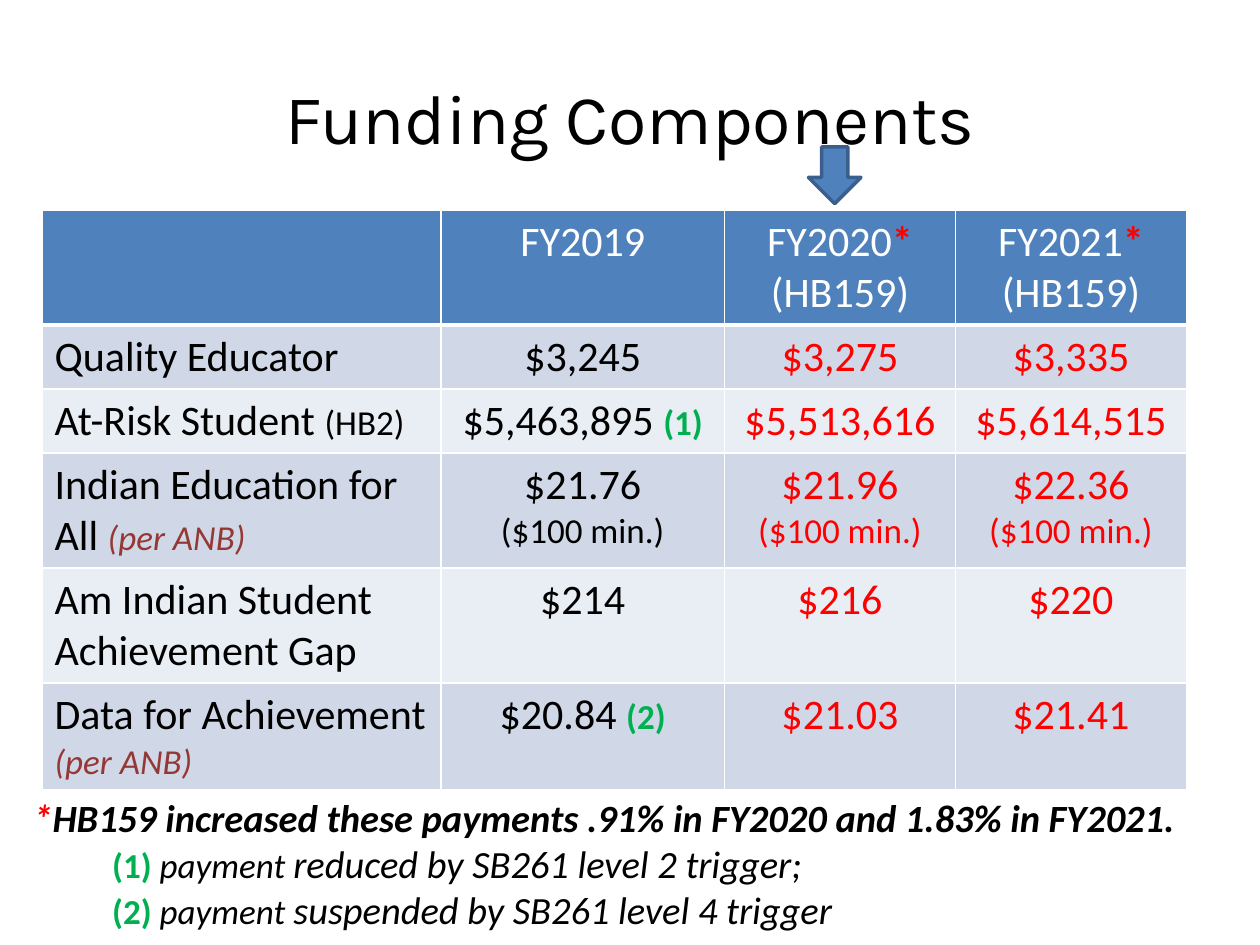
from typing import NamedTuple

from lxml.etree import SubElement
from pptx import Presentation
from pptx.dml.color import RGBColor
from pptx.enum.shapes import MSO_SHAPE
from pptx.enum.text import MSO_ANCHOR, MSO_AUTO_SIZE, PP_ALIGN
from pptx.oxml.ns import qn
from pptx.util import Pt

BLUE, BAND, PALE = "4F81BD", "D0D8E8", "E9EDF4"
WHITE, BLACK, RED, GREEN, BROWN = "FFFFFF", "000000", "FF0000", "00B050", "953735"


class Run(NamedTuple):
    text: str
    size: float = 24
    color: str = BLACK
    bold: bool = False
    italic: bool = False
    font: str = "Calibri"


class Row(NamedTuple):
    label: list
    base: list  # paragraphs for FY2019
    later: list  # run lists for FY2020 and FY2021


def paint(target, color: str) -> None:
    """Give a fill a solid colour."""
    target.solid()
    target.fore_color.rgb = RGBColor.from_string(color)


def write(frame, paras: list, align=PP_ALIGN.LEFT, indents=()) -> None:
    """Fill a text frame with paragraphs, each a list of runs."""
    for i, runs in enumerate(paras):
        para = frame.paragraphs[0] if i == 0 else frame.add_paragraph()
        para.alignment = align
        if i < len(indents) and indents[i]:
            para._p.get_or_add_pPr().set("marL", str(Pt(indents[i])))
        for item in runs:
            run = para.add_run()
            run.text = item.text
            font = run.font
            font.name, font.size = item.font, Pt(item.size)
            font.bold, font.italic = item.bold, item.italic
            paint(font.fill, item.color)


def edge(cell, top: float, bottom: float) -> None:
    """Draw white borders; the side borders are 1 pt."""
    props = cell._tc.get_or_add_tcPr()
    for tag, width in (("lnL", 1), ("lnR", 1), ("lnT", top), ("lnB", bottom)):
        line = SubElement(props, qn(f"a:{tag}"), w=str(Pt(width)))
        fill = SubElement(line, qn("a:solidFill"))
        SubElement(fill, qn("a:srgbClr"), val=WHITE)


def year(name: str) -> list:
    return [Run(name, color=WHITE), Run("*", color=RED, bold=True),
            Run(" (HB159)", color=WHITE)]


def raised(*sums: str, note: str = "") -> list:
    """Red amounts, one run list a year, with an optional small note."""
    tail = [Run(f" {note}", 20, RED)] if note else []
    return [[Run(text, color=RED), *tail] for text in sums]


def mark(text: str) -> Run:
    return Run(text, 20, GREEN, bold=True)


PER_ANB = Run("(per ANB)", 20, BROWN, italic=True)
MIN = "($100 min.)"
ROWS = [
    Row([], [[Run("FY2019", color=WHITE)]], [year("FY2020"), year("FY2021")]),
    Row([Run("Quality Educator")], [[Run("$3,245")]],
        raised("$3,275", "$3,335")),
    Row([Run("At-Risk Student "), Run("(HB2)", 20)],
        [[Run("$5,463,895 "), mark("(1)")]],
        raised("$5,513,616", "$5,614,515")),
    Row([Run("Indian Education for All "), PER_ANB],
        [[Run("$21.76")], [Run(MIN, 20)]],
        raised("$21.96", "$22.36", note=MIN)),
    Row([Run("Am Indian Student Achievement Gap")], [[Run("$214")]],
        raised("$216", "$220")),
    Row([Run("Data for Achievement "), PER_ANB],
        [[Run("$20.84 "), mark("(2)")]],
        raised("$21.03", "$21.41")),
]
WIDTHS = [228, 162, 132, 132]


def add_grid(slide) -> None:
    frame = slide.shapes.add_table(
        len(ROWS), len(WIDTHS), Pt(24), Pt(120), Pt(sum(WIDTHS)), Pt(326))
    table = frame.table
    for col, width in zip(table.columns, WIDTHS):
        col.width = Pt(width)
    for r, row in enumerate(ROWS):
        table.rows[r].height = Pt(29.5)  # rows grow with their text
        fill = BLUE if r == 0 else BAND if r % 2 else PALE
        paras = [[row.label], row.base, *([runs] for runs in row.later)]
        for c, text in enumerate(paras):
            cell = table.cell(r, c)
            edge(cell, 3 if r == 1 else 1, 3 if r == 0 else 1)
            paint(cell.fill, fill)
            write(cell.text_frame, text,
                  align=PP_ALIGN.CENTER if c else PP_ALIGN.LEFT)
    frame.height = Pt(326)


def add_arrow(slide) -> None:
    arrow = slide.shapes.add_shape(
        MSO_SHAPE.DOWN_ARROW, Pt(462), Pt(84), Pt(30), Pt(32.4))
    arrow.shadow.inherit = False
    paint(arrow.fill, BLUE)
    paint(arrow.line.fill, "3A5F8C")
    arrow.line.width = Pt(2)


def trigger(tag: str, verb: str, level: int) -> list:
    return [mark(f"{tag} "), Run("payment ", 20, italic=True),
            Run(f"{verb} by SB261 level {level} trigger", 22, italic=True)]


def add_notes(slide) -> None:
    box = slide.shapes.add_textbox(Pt(12), Pt(450), Pt(696), Pt(87))
    frame = box.text_frame
    frame.word_wrap = True
    frame.auto_size = MSO_AUTO_SIZE.SHAPE_TO_FIT_TEXT
    lead = Run("HB159 increased these payments .91% in FY2020 and 1.83% in FY2021.",
               22, bold=True, italic=True)
    first = trigger("(1)", "reduced", 2)
    first[-1] = first[-1]._replace(text=first[-1].text + ";")
    write(frame, [[lead._replace(text="*", color=RED), lead], first,
                  trigger("(2)", "suspended", 4)], indents=(0, 45, 45))


def main() -> None:
    deck = Presentation()
    deck.slide_width, deck.slide_height = Pt(720), Pt(540)
    slide = deck.slides.add_slide(deck.slide_layouts[5])
    title = slide.shapes.title
    title.left, title.top, title.width, title.height = map(Pt, (36, 21.6, 648, 90))
    title.text_frame.vertical_anchor = MSO_ANCHOR.MIDDLE
    write(title.text_frame, [[Run("Funding Components", 40, font="Karla")]],
          align=PP_ALIGN.CENTER)
    add_grid(slide)
    add_arrow(slide)
    add_notes(slide)
    deck.save("out.pptx")


if __name__ == "__main__":
    main()
